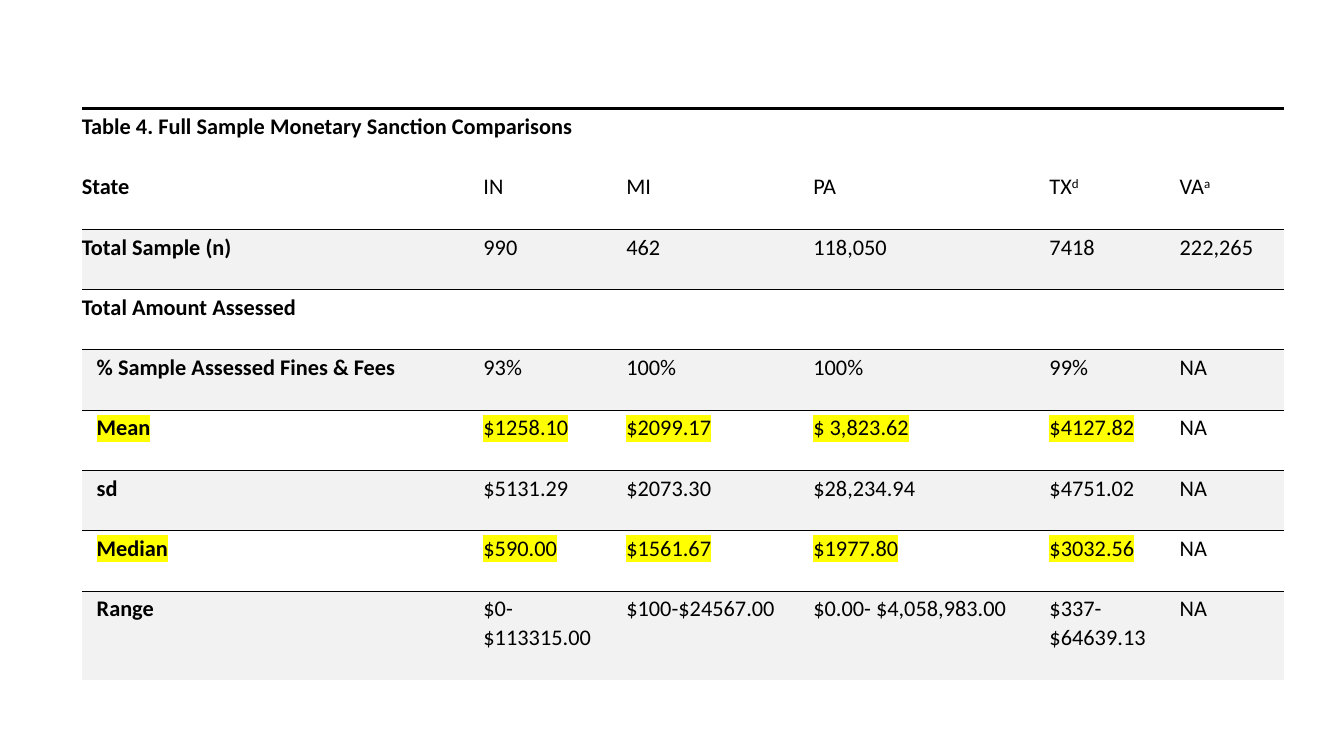
"""Build a slide with a table that compares monetary sanctions by state."""
from lxml import etree
from pptx import Presentation
from pptx.dml.color import RGBColor
from pptx.oxml.ns import qn
from pptx.util import Cm, Pt

BLACK = RGBColor(0, 0, 0)
WHITE = RGBColor(255, 255, 255)
GREY = RGBColor(0xF2, 0xF2, 0xF2)
YELLOW = RGBColor(255, 255, 0)
FONT = "Calibri"
PLAIN = "{2D5ABB26-0587-4C30-8999-92F81FD0307C}"

ROWS = [
    ["Table 4. Full Sample Monetary Sanction Comparisons"],
    ["State", "IN", "MI", "PA", "TX^d", "VA^a"],
    ["Total Sample (n)", "990", "462", "118,050", "7418", "222,265"],
    ["Total Amount Assessed"],
    ["% Sample Assessed Fines & Fees", "93%", "100%", "100%", "99%", "NA"],
    ["Mean", "$1258.10", "$2099.17", "$ 3,823.62", "$4127.82", "NA"],
    ["sd", "$5131.29", "$2073.30", "$28,234.94", "$4751.02", "NA"],
    ["Median", "$590.00", "$1561.67", "$1977.80", "$3032.56", "NA"],
    ["Range", "$0-\n$113315.00", "$100-$24567.00", "$0.00- $4,058,983.00",
     "$337-\n$64639.13", "NA"],
]
WIDTHS = [10.8, 3.84, 5.03, 6.35, 3.5, 2.8]
HEIGHTS = [1.62] * 8 + [2.39]
MARKED = ("Mean", "Median")
FIRST_SUB = 4


def add_fill(parent, tag, color):
    node = etree.SubElement(parent, qn(tag))
    etree.SubElement(node, qn("a:srgbClr")).set("val", str(color))


def write(cell, text, bold=False, mark=False, indent=0):
    cell.margin_left, cell.margin_right = Cm(indent), Cm(0.23)
    cell.margin_top, cell.margin_bottom = Cm(0.08), Cm(0.66)
    frame = cell.text_frame
    for i, line in enumerate(text.split("\n")):
        para = frame.add_paragraph() if i else frame.paragraphs[0]
        para.line_spacing = 1.06
        for j, part in enumerate(line.split("^")):
            run = para.add_run()
            run.text = part
            font = run.font
            font.size, font.bold = Pt(17), bold
            font.color.rgb = BLACK
            props = run._r.get_or_add_rPr()
            if mark:
                add_fill(props, "a:highlight", YELLOW)
            if j:
                props.set("baseline", "30000")
            font.name = FONT


def rule(cell, side, width):
    line = etree.Element(qn("a:ln" + side))
    line.set("w", str(Pt(width)))
    add_fill(line, "a:solidFill", BLACK)
    cell._tc.get_or_add_tcPr().insert(0, line)


def main():
    deck = Presentation()
    deck.slide_width, deck.slide_height = Cm(36.14), Cm(20.32)
    slide = deck.slides.add_slide(deck.slide_layouts[6])
    frame = slide.shapes.add_table(len(ROWS), len(WIDTHS), Cm(2.2), Cm(2.92),
                                   Cm(sum(WIDTHS)), Cm(sum(HEIGHTS)))
    table = frame.table
    table.first_row = table.horz_banding = False
    table._tbl.tblPr.find(qn("a:tableStyleId")).text = PLAIN
    for col, width in zip(table.columns, WIDTHS):
        col.width = Cm(width)
    for row, height in zip(table.rows, HEIGHTS):
        row.height = Cm(height)
    for r, texts in enumerate(ROWS):
        shaded = r > 0 and r % 2 == 0
        for c in range(len(WIDTHS)):
            cell = table.cell(r, c)
            cell.fill.solid()
            cell.fill.fore_color.rgb = GREY if shaded else WHITE
            if r == 0 or shaded:
                rule(cell, "T", 0.5 if r else 2.25)
            if c < len(texts):
                write(cell, texts[c], bold=c == 0,
                      mark=texts[0] in MARKED and texts[c] != "NA",
                      indent=0.4 if c == 0 and r >= FIRST_SUB else 0)
    table.cell(0, 0).merge(table.cell(0, len(WIDTHS) - 1))
    deck.save("out.pptx")


if __name__ == "__main__":
    main()
